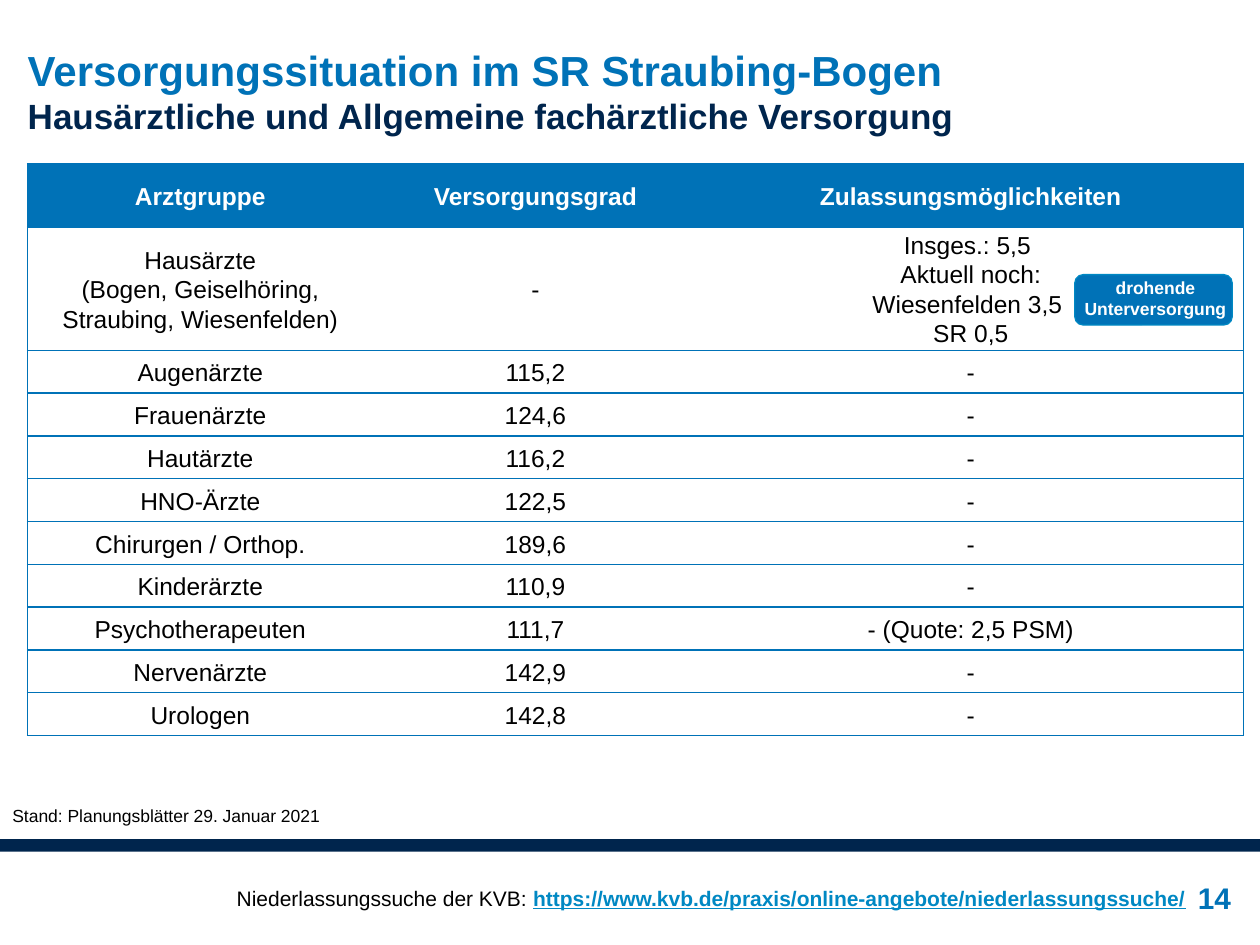
from lxml.etree import SubElement
from pptx import Presentation
from pptx.dml.color import RGBColor
from pptx.enum.shapes import MSO_SHAPE
from pptx.enum.text import MSO_ANCHOR, MSO_AUTO_SIZE, PP_ALIGN
from pptx.oxml.ns import qn
from pptx.util import Inches, Pt

BLUE, NAVY, LINK, BLACK, WHITE = "0072B7", "00254D", "0088C3", "000000", "FFFFFF"
COLUMN_WIDTHS = [2.74, 2.58, 4.33]
HEADER_HEIGHT, FIRST_HEIGHT, ROW_HEIGHT = 0.5, 0.98, 0.34
ROWS = [
    ("Arztgruppe", "Versorgungsgrad", "Zulassungsmöglichkeiten"),
    ("Hausärzte\n(Bogen, Geiselhöring, Straubing, Wiesenfelden)", "-",
     "Insges.: 5,5 \nAktuell noch:\nWiesenfelden 3,5 \nSR 0,5"),
    ("Augenärzte", "115,2", "-"),
    ("Frauenärzte", "124,6", "-"),
    ("Hautärzte", "116,2", "-"),
    ("HNO-Ärzte", "122,5", "-"),
    ("Chirurgen / Orthop.", "189,6", "-"),
    ("Kinderärzte", "110,9", "-"),
    ("Psychotherapeuten", "111,7", "- (Quote: 2,5 PSM)"),
    ("Nervenärzte", "142,9", "-"),
    ("Urologen", "142,8", "-"),
]


def color(value):
    """Return the colour for a hex string."""
    return RGBColor.from_string(value)


def style_font(font, size, value, bold=False):
    """Set family, size, colour and weight of a font."""
    font.name, font.size, font.bold = "Arial", Pt(size), bold
    font.color.rgb = color(value)


def set_margins(frame, left=0, top=0, right=0, bottom=0):
    """Set the inner margins of a text frame or cell in inches."""
    frame.margin_left, frame.margin_top = Inches(left), Inches(top)
    frame.margin_right, frame.margin_bottom = Inches(right), Inches(bottom)


def add_box(slide, box, kind, fill):
    """Add a filled preset shape without shadow or outline."""
    shape = slide.shapes.add_shape(kind, *map(Inches, box))
    shape.shadow.inherit = False
    shape.fill.solid()
    shape.fill.fore_color.rgb = color(fill)
    shape.line.fill.background()
    return shape


def add_text(slide, box, text, size, value, bold=False):
    """Add a wrapping one-paragraph text box and return it."""
    shape = slide.shapes.add_textbox(*map(Inches, box))
    shape.text_frame.word_wrap = True
    paragraph = shape.text_frame.paragraphs[0]
    paragraph.add_run().text = text
    style_font(paragraph.font, size, value, bold)
    return shape


def add_title(slide, box):
    """Place the two-line heading in the title placeholder."""
    title = slide.shapes.title
    title.left, title.top, title.width, title.height = map(Inches, box)
    frame = title.text_frame
    set_margins(frame)
    frame.auto_size = MSO_AUTO_SIZE.NONE
    frame.vertical_anchor = MSO_ANCHOR.TOP
    paragraph = frame.paragraphs[0]
    paragraph.alignment = PP_ALIGN.LEFT
    heading = paragraph.add_run()
    heading.text = "Versorgungssituation im SR Straubing-Bogen"
    style_font(heading.font, 24, BLUE, True)
    paragraph.add_line_break()
    subheading = paragraph.add_run()
    subheading.text = "Hausärztliche und Allgemeine fachärztliche Versorgung"
    style_font(subheading.font, 20, NAVY, True)


def set_borders(cell, visible):
    """Draw the named cell edges in blue and clear the others."""
    properties = cell._tc.get_or_add_tcPr()
    for edge in ("lnL", "lnR", "lnT", "lnB"):
        line = SubElement(properties, qn(f"a:{edge}"), w=str(Pt(1)))
        if edge in visible:
            fill = SubElement(line, qn("a:solidFill"))
            SubElement(fill, qn("a:srgbClr"), val=BLUE)
        else:
            SubElement(line, qn("a:noFill"))


def fill_cell(cell, text, header, edges):
    """Write and format one table cell."""
    set_borders(cell, edges)
    cell.fill.solid()
    cell.fill.fore_color.rgb = color(BLUE if header else WHITE)
    set_margins(cell, 0.01, 0.01, 0.01)
    cell.vertical_anchor = MSO_ANCHOR.MIDDLE
    cell.text = text
    for paragraph in cell.text_frame.paragraphs:
        paragraph.alignment = PP_ALIGN.CENTER
        paragraph.line_spacing = 1.07
        style_font(paragraph.font, 14, WHITE if header else BLACK, header)


def add_supply_table(slide, box):
    """Add the table of physician groups."""
    table = slide.shapes.add_table(
        len(ROWS), len(COLUMN_WIDTHS), *map(Inches, box)).table
    for column, width in zip(table.columns, COLUMN_WIDTHS):
        column.width = Inches(width)
    heights = [HEADER_HEIGHT, FIRST_HEIGHT] + [ROW_HEIGHT] * (len(ROWS) - 2)
    for row, height in zip(table.rows, heights):
        row.height = Inches(height)
    side_edges = [["lnL"], [], ["lnR"]]
    for row_index, texts in enumerate(ROWS):
        for column_index, text in enumerate(texts):
            edges = ["lnT", "lnB"] + side_edges[column_index]
            fill_cell(table.cell(row_index, column_index), text, row_index == 0, edges)


def add_warning_badge(slide, box):
    """Add the rounded undersupply badge."""
    badge = add_box(slide, box, MSO_SHAPE.ROUNDED_RECTANGLE, BLUE)
    badge.line.color.rgb = color(LINK)
    badge.line.width = Pt(0.75)
    frame = badge.text_frame
    frame.word_wrap = True
    frame.vertical_anchor = MSO_ANCHOR.TOP
    set_margins(frame, left=0.03)
    paragraph = frame.paragraphs[0]
    paragraph.text = "drohende Unterversorgung"
    paragraph.alignment = PP_ALIGN.CENTER
    style_font(paragraph.font, 10, WHITE, True)


def add_footer(slide, box):
    """Add the bar, search address and page number at the bottom."""
    left, top, width, height = box
    add_box(slide, (left, top, width, 0.1), MSO_SHAPE.RECTANGLE, NAVY)
    number = add_text(slide, (left + 9.25, top + 0.09, 0.52, height - 0.09),
                      "14", 17, BLUE, True)
    set_margins(number.text_frame, left=0.03)
    number.text_frame.vertical_anchor = MSO_ANCHOR.MIDDLE
    number.text_frame.paragraphs[0].alignment = PP_ALIGN.RIGHT
    search = add_text(slide, (left + 1.78, top + 0.32, 8.91, 0.61),
                      "Niederlassungssuche der KVB: ", 12, BLACK)
    address = search.text_frame.paragraphs[0].add_run()
    address.text = "https://www.kvb.de/praxis/online-angebote/niederlassungssuche/"
    style_font(address.font, 12, LINK, True)
    address.font.underline = True


def main():
    """Build and save the presentation."""
    presentation = Presentation()
    presentation.slide_width, presentation.slide_height = Inches(10), Inches(7.5)
    slide = presentation.slides.add_slide(presentation.slide_layouts[5])
    add_title(slide, (0.22, 0.35, 8.4, 0.5))
    add_supply_table(slide, (0.22, 1.3, 9.65, 4.55))
    add_text(slide, (0, 6.34, 3.4, 0.27),
             "Stand: Planungsblätter 29. Januar 2021", 10, BLACK)
    add_footer(slide, (0, 6.66, 10, 0.84))
    add_warning_badge(slide, (8.53, 2.18, 1.25, 0.4))
    presentation.save("out.pptx")


if __name__ == "__main__":
    main()
